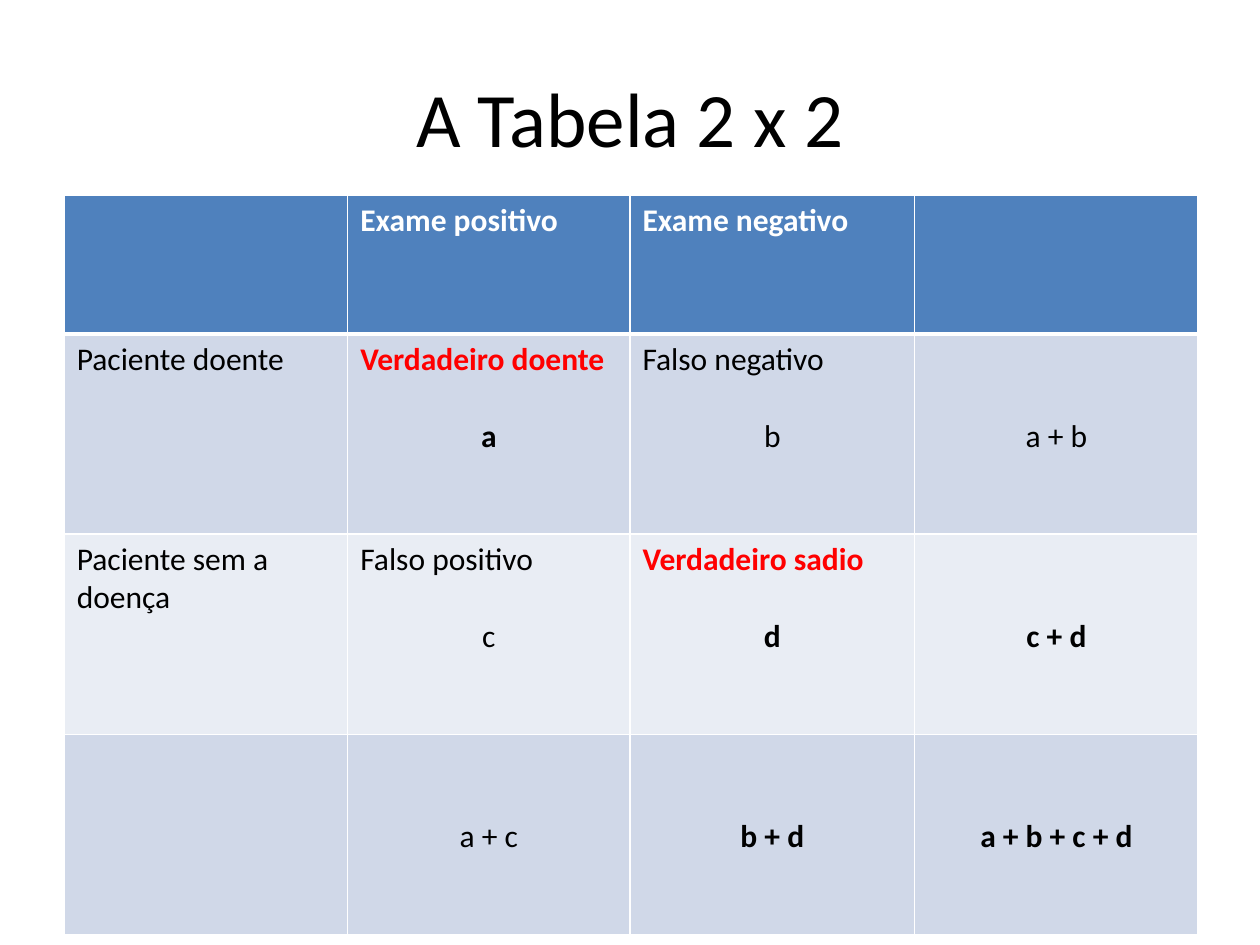
from dataclasses import dataclass

from lxml import etree
from pptx import Presentation
from pptx.dml.color import RGBColor
from pptx.enum.text import MSO_ANCHOR, PP_ALIGN
from pptx.oxml.ns import qn
from pptx.util import Inches, Pt

CENTER, LEFT = PP_ALIGN.CENTER, PP_ALIGN.LEFT
MIDDLE = MSO_ANCHOR.MIDDLE
FONT = "Calibri"
WIDTH, HEIGHT = Inches(10), Inches(7.5)
BODY_SIZE, LINE_GAP = 18, 22
COLORS = {
    "header": "4F81BD",
    "odd": "D0D8E8",
    "even": "E9EDF4",
    "white": "FFFFFF",
    "black": "000000",
    "red": "FF0000",
}
ROW_FILLS = ("header", "odd", "even", "odd")
COLUMN_WIDTHS = (2.25, 2.24, 2.26, 2.25)
ROW_HEIGHTS = (1.1, 1.59, 1.59, 1.59)


@dataclass(frozen=True)
class Entry:
    label: str = ""
    count: str = ""
    label_color: str = "black"
    label_bold: bool = False
    count_bold: bool = False


def heading(label: str = "") -> Entry:
    return Entry(label, label_color="white", label_bold=True)


def correct(label: str, count: str) -> Entry:
    return Entry(label, count, "red", True, True)


def total(count: str, bold: bool = True) -> Entry:
    return Entry(count=count, count_bold=bold)


CONTINGENCY = (
    (heading(), heading("Exame positivo"), heading("Exame negativo"), heading()),
    (Entry("Paciente doente"), correct("Verdadeiro doente", "a"),
     Entry("Falso negativo", "b"), total("a + b", False)),
    (Entry("Paciente sem a doença"), Entry("Falso positivo", "c"),
     correct("Verdadeiro sadio", "d"), total("c + d")),
    (Entry(), total("a + c", False), total("b + d"), total("a + b + c + d")),
)


def add_text(paragraph, text: str, size: int, color: str, bold: bool, align) -> None:
    paragraph.alignment = align
    run = paragraph.add_run()
    run.text = text
    run.font.name = FONT
    run.font.size = Pt(size)
    run.font.bold = bold
    run.font.color.rgb = RGBColor.from_string(COLORS[color])


def add_borders(cell, top: int, bottom: int) -> None:
    properties = cell._tc.get_or_add_tcPr()
    for side, points in (("L", 1), ("R", 1), ("T", top), ("B", bottom)):
        line = etree.SubElement(properties, qn(f"a:ln{side}"), w=str(Pt(points)))
        fill = etree.SubElement(line, qn("a:solidFill"))
        etree.SubElement(fill, qn("a:srgbClr"), val=COLORS["white"])


def fill_cell(cell, entry: Entry, row: int) -> None:
    add_borders(cell, 3 if row == 1 else 1, 3 if row == 0 else 1)
    cell.fill.solid()
    cell.fill.fore_color.rgb = RGBColor.from_string(COLORS[ROW_FILLS[row]])
    paragraph = cell.text_frame.paragraphs[0]
    if entry.label:
        add_text(paragraph, entry.label, BODY_SIZE, entry.label_color,
                 entry.label_bold, LEFT)
    if entry.count:
        if entry.label:
            paragraph = cell.text_frame.add_paragraph()
            paragraph.space_before = Pt(LINE_GAP)
        else:
            cell.margin_top = Inches(0.05) + Pt(2 * LINE_GAP)
        add_text(paragraph, entry.count, BODY_SIZE, "black", entry.count_bold, CENTER)


def add_title(slide, text: str) -> None:
    title = slide.shapes.add_textbox(
        int(WIDTH * 0.05), int(HEIGHT * 0.04), int(WIDTH * 0.9), Inches(1.25))
    title.text_frame.word_wrap = True
    title.text_frame.vertical_anchor = MIDDLE
    add_text(title.text_frame.paragraphs[0], text, 44, "black", False, CENTER)


def add_contingency_table(slide) -> None:
    table = slide.shapes.add_table(
        len(ROW_HEIGHTS), len(COLUMN_WIDTHS), Inches(0.51), Inches(1.55),
        Inches(sum(COLUMN_WIDTHS)), Inches(sum(ROW_HEIGHTS))).table
    for column, width in zip(table.columns, COLUMN_WIDTHS):
        column.width = Inches(width)
    for row, height in zip(table.rows, ROW_HEIGHTS):
        row.height = Inches(height)
    for row, entries in enumerate(CONTINGENCY):
        for column, entry in enumerate(entries):
            fill_cell(table.cell(row, column), entry, row)


def main() -> None:
    presentation = Presentation()
    presentation.slide_width, presentation.slide_height = WIDTH, HEIGHT
    slide = presentation.slides.add_slide(presentation.slide_layouts[6])
    add_title(slide, "A Tabela 2 x 2")
    add_contingency_table(slide)
    presentation.save("out.pptx")


if __name__ == "__main__":
    main()
